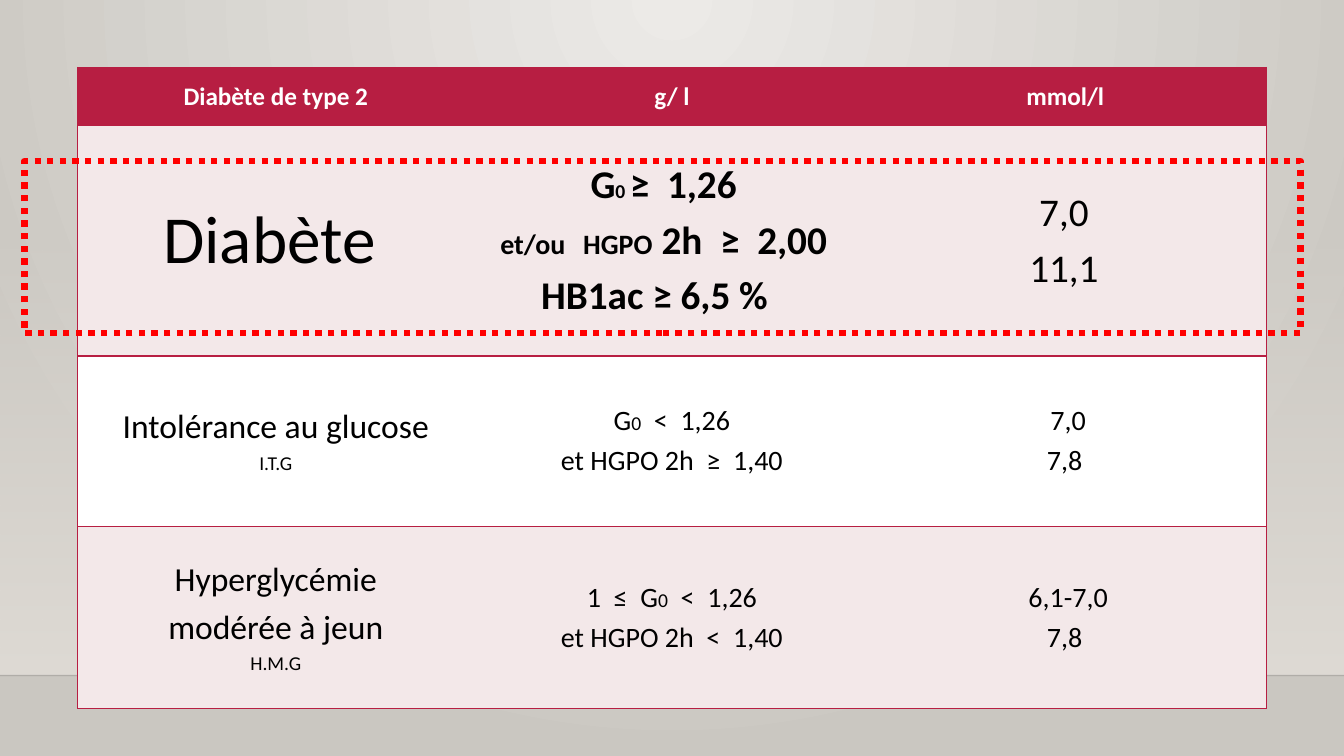
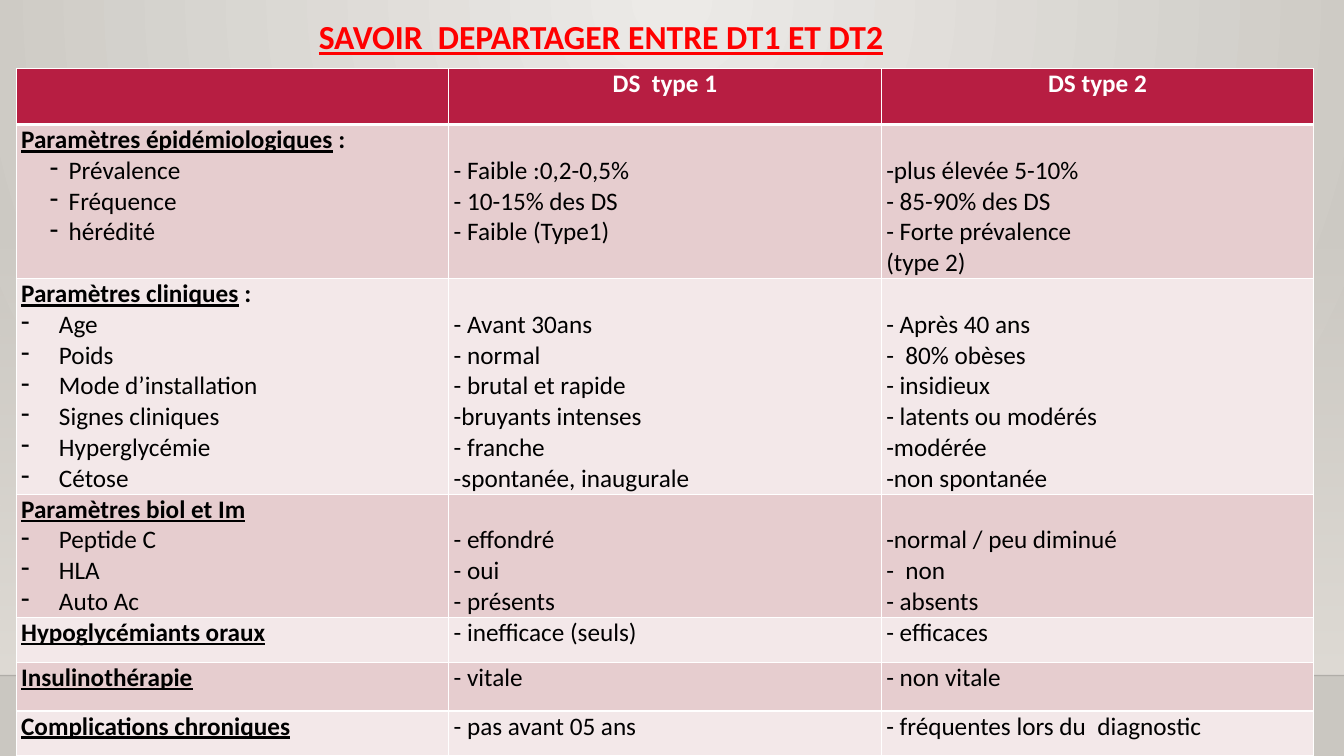
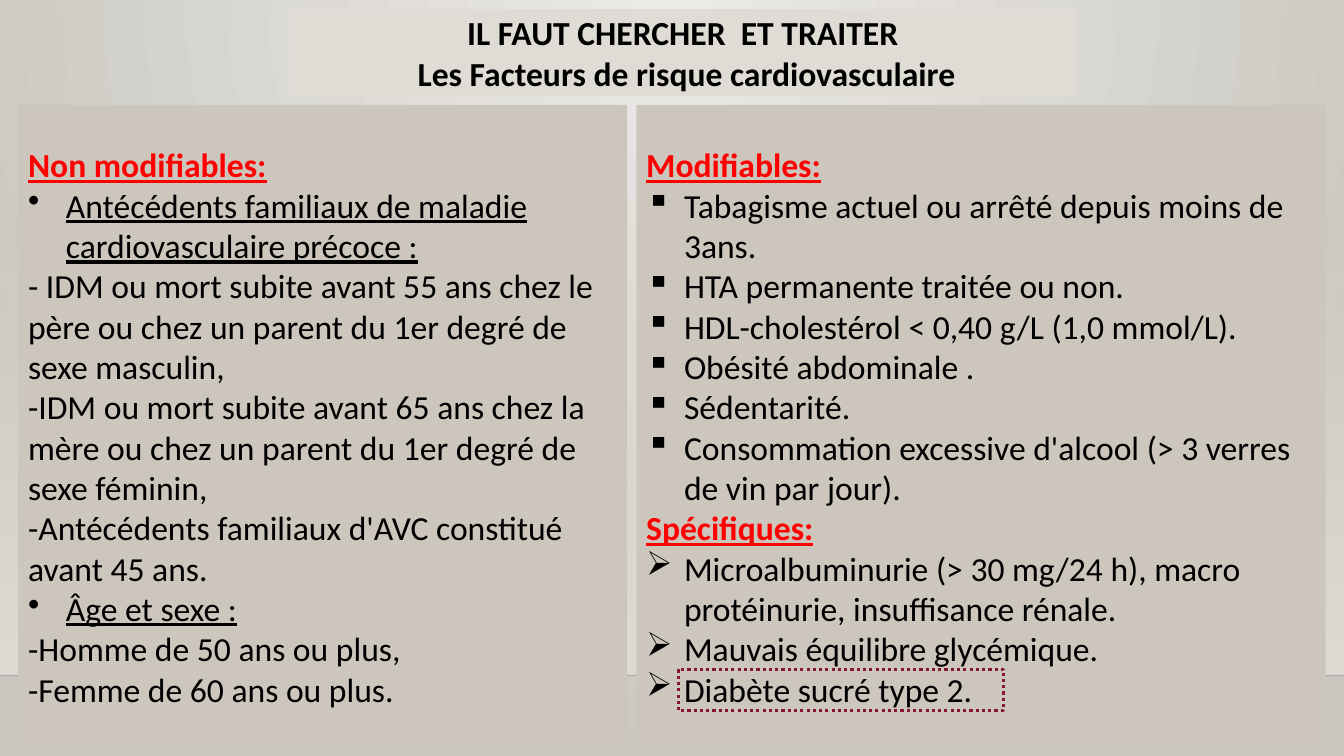
from lxml.etree import SubElement
from pptx import Presentation
from pptx.dml.color import RGBColor
from pptx.enum.dml import MSO_LINE
from pptx.enum.shapes import MSO_CONNECTOR, MSO_SHAPE
from pptx.enum.text import MSO_ANCHOR, MSO_AUTO_SIZE, PP_ALIGN
from pptx.oxml.ns import qn
from pptx.util import Pt

BLACK = RGBColor(0x00, 0x00, 0x00)
WHITE = RGBColor(0xFF, 0xFF, 0xFF)
RED = RGBColor(0xFF, 0x00, 0x00)
CRIMSON = RGBColor(0xB7, 0x1E, 0x42)
MAROON = RGBColor(0x87, 0x16, 0x31)
ROSE = RGBColor(0xE6, 0xCD, 0xCF)
PALE_ROSE = RGBColor(0xF3, 0xE8, 0xE9)
TAUPE = RGBColor(0xCC, 0xC6, 0xBC)
SAND = RGBColor(0xDF, 0xDB, 0xD5)
GLOW = RGBColor(0xEC, 0xEA, 0xE7)
STONE = RGBColor(0xCA, 0xC7, 0xC1)

BODY = {"name": "Calibri", "size": Pt(18), "bold": False, "underline": False, "color": BLACK}
BOLD = {"bold": True}
UNDERLINED = {"underline": True}
KEY = {"bold": True, "underline": True}
RED_KEY = {**KEY, "color": RED}
LARGE = {**BODY, "size": Pt(24)}
HEADER = {**BODY, "bold": True, "color": WHITE}


def write(frame, lines, base, alignment=PP_ALIGN.LEFT, spacing=0):
    for index, (runs, indents) in enumerate(lines):
        paragraph = frame.add_paragraph() if index else frame.paragraphs[0]
        paragraph.alignment = alignment
        styles = [{**base, **changes} for _, changes in runs]
        tallest = max(style["size"].pt for style in styles)
        paragraph.space_before = Pt(round(tallest * spacing, 1) if index else 0)
        properties = paragraph._p.get_or_add_pPr()
        for side in ("marL", "marR", "indent"):
            if side in indents:
                properties.set(side, str(Pt(indents[side])))
        if "bullet" in indents:
            SubElement(properties, qn("a:buChar")).set("char", indents["bullet"])
        for (text, _), style in zip(runs, styles):
            run = paragraph.add_run()
            run.text = text
            run.font.color.rgb = style.pop("color")
            for attribute, value in style.items():
                setattr(run.font, attribute, value)


def paint(cell, fill, margins, borders):
    cell.fill.solid()
    cell.fill.fore_color.rgb = fill
    for side, margin in zip(("left", "top", "right", "bottom"), margins):
        setattr(cell, f"margin_{side}", Pt(margin))
    properties = cell._tc.get_or_add_tcPr()
    for position, (side, (color, width)) in enumerate(zip("LRTB", borders)):
        edge = SubElement(properties, qn(f"a:ln{side}"))
        edge.set("w", str(Pt(width)))
        if color is None:
            SubElement(edge, qn("a:noFill"))
        else:
            SubElement(SubElement(edge, qn("a:solidFill")), qn("a:srgbClr")).set("val", str(color))
        properties.insert(position, edge)


deck = Presentation()
deck.slide_width, deck.slide_height = Pt(960), Pt(540)
title_only, blank = deck.slide_layouts[5], deck.slide_layouts[6]
criteria, comparison, risks = [deck.slides.add_slide(layout) for layout in (blank, title_only, title_only)]

master = deck.slide_master
backdrop = master.background.fill
backdrop.gradient()
for stop, color in zip(backdrop.gradient_stops, (GLOW, STONE)):
    stop.color.rgb = color
gradient = master.element.xpath("p:cSld/p:bg//a:gradFill")[0]
for direction in gradient.xpath("a:lin"):
    gradient.remove(direction)
circle = SubElement(gradient, qn("a:path"))
circle.set("path", "circle")
focus = SubElement(circle, qn("a:fillToRect"))
for side, percent in {"l": 43, "t": 0, "r": 43, "b": 100}.items():
    focus.set(side, str(percent * 1000))

wall = criteria.shapes.add_shape(MSO_SHAPE.RECTANGLE, 0, Pt(159), Pt(960), Pt(323.5))
wall.shadow.inherit = False
wall.line.fill.background()
wall.fill.gradient()
wall.fill.gradient_angle = 270
for stop in wall.fill.gradient_stops:
    stop.color.rgb = SAND
SubElement(wall.element.xpath(".//a:gs/a:srgbClr")[0], qn("a:alpha")).set("val", "0")

horizon = criteria.shapes.add_connector(MSO_CONNECTOR.STRAIGHT, 0, Pt(482.5), Pt(960), Pt(482.5))
horizon.line.color.rgb = BLACK
horizon.line.width = Pt(1)
SubElement(horizon.element.xpath(".//a:ln//a:srgbClr")[0], qn("a:alpha")).set("val", "20000")
SubElement(horizon.element.spPr, qn("a:effectLst"))

for offset, scenery in enumerate((wall, horizon)):
    scenery.element.xpath(".//p:cNvPr")[0].set("id", str(100 + offset))
    master.element.cSld.spTree.insert(2 + offset, scenery.element)

SMALL, MEDIUM, BIG = {"size": Pt(14)}, {"size": Pt(20)}, {"size": Pt(24)}
HUGE = {"size": Pt(48)}
STRONG = {"size": Pt(28), "bold": True}
STRONG_MEDIUM, STRONG_SMALL = {**MEDIUM, **BOLD}, {**SMALL, **BOLD}

criteria_rows = [
    (41.5, CRIMSON, [
        [([("Diabète de type 2", {})], {})],
        [([("g/ l", {})], {})],
        [([("mmol/l", {})], {"marR": 4})],
    ]),
    (164.5, PALE_ROSE, [
        [([("Diabète", HUGE)], {"marR": 9})],
        [
            ([("G", STRONG), ("0 ", STRONG_SMALL), ("≥  1,26", STRONG)], {"marR": 12}),
            ([("et/ou", STRONG_MEDIUM), ("  ", STRONG), ("HGPO", STRONG_MEDIUM), (" 2h  ≥  2,00", STRONG)], {}),
            ([("HB1ac ≥ 6,5 %", STRONG)], {"marR": 25}),
        ],
        [([("7,0", {"size": Pt(28)})], {"marR": 6}), ([("11,1", {"size": Pt(28)})], {})],
    ]),
    (122, WHITE, [
        [([("Intolérance au glucose", BIG)], {}), ([("I.T.G", SMALL)], {})],
        [
            ([("G", MEDIUM), ("0", SMALL), ("  <  1,26", MEDIUM)], {}),
            ([("et HGPO 2h  ≥  1,40", MEDIUM)], {}),
        ],
        [([("7,0", MEDIUM)], {}), ([("7,8", MEDIUM)], {"marR": 5})],
    ]),
    (130, PALE_ROSE, [
        [([("Hyperglycémie", BIG)], {}), ([("modérée à jeun", BIG)], {}), ([("H.M.G", SMALL)], {})],
        [
            ([("1  ≤  G", MEDIUM), ("0", SMALL), ("  <  1,26", MEDIUM)], {}),
            ([("et HGPO 2h  <  1,40", MEDIUM)], {}),
        ],
        [([("6,1-7,0", MEDIUM)], {}), ([("7,8", MEDIUM)], {"marR": 5})],
    ]),
]
thresholds = criteria.shapes.add_table(4, 3, Pt(55.5), Pt(48.25), Pt(849), Pt(458)).table
for column in thresholds.columns:
    column.width = Pt(283)
rule, no_rule = (CRIMSON, 1), (None, 1)
for row, (height, fill, contents) in enumerate(criteria_rows):
    thresholds.rows[row].height = Pt(height)
    for column, lines in enumerate(contents):
        cell = thresholds.cell(row, column)
        cell.vertical_anchor = MSO_ANCHOR.MIDDLE
        sides = (rule if column == 0 else no_rule, rule if column == 2 else no_rule)
        paint(cell, fill, (7.2, 3.6, 7.2, 3.6), (*sides, rule, rule))
        write(cell.text_frame, lines, BODY if row else HEADER, PP_ALIGN.CENTER, 0.2)

DASH = {"bullet": "-", "marL": 27, "indent": -27}
INNER_DASH = {"bullet": "-", "marL": 34, "indent": -13.5}
comparison_rows = [
    (110, "Paramètres épidémiologiques", " :", INNER_DASH,
     ["Prévalence", "Fréquence", "hérédité"],
     ["- Faible :0,2-0,5%", "- 10-15% des DS", "- Faible (Type1)"],
     ["-plus élevée 5-10%", "- 85-90% des DS", "- Forte prévalence", "(type 2)"]),
    (154, "Paramètres cliniques", " :", DASH,
     ["Age", "Poids", "Mode d’installation", "Signes cliniques", "Hyperglycémie", "Cétose"],
     ["- Avant 30ans", "- normal", "- brutal et rapide", "-bruyants intenses", "- franche",
      "-spontanée, inaugurale"],
     ["- Après 40 ans", "-  80% obèses", "- insidieux", "- latents ou modérés", "-modérée",
      "-non spontanée"]),
    (88, "Paramètres biol et Im", "", DASH,
     ["Peptide C", "HLA", "Auto Ac"],
     ["- effondré", "- oui", "- présents"],
     ["-normal / peu diminué", "-  non", "- absents"]),
    (32, "Hypoglycémiants oraux", "", DASH, [], ["- inefficace (seuls)"], ["- efficaces"]),
    (35, "Insulinothérapie", "", DASH, [], ["- vitale"], ["- non vitale"]),
    (32, "Complications chroniques", "", DASH, [], ["- pas avant 05 ans"],
     ["- fréquentes lors du  diagnostic"]),
]
differences = comparison.shapes.add_table(7, 3, Pt(11.5), Pt(49), Pt(927), Pt(491)).table
for column in differences.columns:
    column.width = Pt(309)
hairline, thick = (WHITE, 1), (WHITE, 3)
differences.rows[0].height = Pt(40)
for column, diabetes_type in enumerate(("", "DS  type 1", "DS type 2")):
    cell = differences.cell(0, column)
    paint(cell, CRIMSON, (3.6, 0, 3.6, 0), (hairline, hairline, hairline, thick))
    if diabetes_type:
        write(cell.text_frame, [([(diabetes_type, {})], {})], HEADER, PP_ALIGN.CENTER)
for row, (height, parameter, colon, dash, items, *types) in enumerate(comparison_rows, 1):
    differences.rows[row].height = Pt(height)
    heading = [(parameter, KEY)] + ([(colon, BOLD)] if colon else [])
    contents = [[(heading, {})] + [([(item, {})], dash) for item in items]]
    contents += [[([(finding, {})], {}) for finding in findings] for findings in types]
    for column, lines in enumerate(contents):
        cell = differences.cell(row, column)
        top = 22 if column and items else 0
        top_rule = thick if row == 1 else hairline
        paint(cell, ROSE if row % 2 else PALE_ROSE, (3.6, top, 3.6, 0),
              (hairline, hairline, top_rule, hairline))
        write(cell.text_frame, lines, BODY, PP_ALIGN.JUSTIFY)

DOT, SQUARE, ARROW = [{"bullet": mark, "marL": 27, "indent": -27} for mark in "•▪➢"]
panels = [
    (13, 435, [
        ("Non modifiables:", RED_KEY, {}),
        ("Antécédents familiaux de maladie cardiovasculaire précoce :", UNDERLINED, DOT),
        ("- IDM ou mort subite avant 55 ans chez le père ou chez un parent du 1er degré de sexe masculin,", {}, {}),
        ("-IDM ou mort subite avant 65 ans chez la mère ou chez un parent du 1er degré de sexe féminin,", {}, {}),
        ("-Antécédents familiaux d'AVC constitué avant 45 ans.", {}, {}),
        ("Âge et sexe :", UNDERLINED, DOT),
        ("-Homme de 50 ans ou plus,", {}, {}),
        ("-Femme de 60 ans ou plus.", {}, {}),
    ]),
    (454.5, 492.5, [
        ("Modifiables:", RED_KEY, {}),
        ("Tabagisme actuel ou arrêté depuis moins de 3ans.", {}, SQUARE),
        ("HTA permanente traitée ou non.", {}, SQUARE),
        ("HDL-cholestérol < 0,40 g/L (1,0 mmol/L).", {}, SQUARE),
        ("Obésité abdominale .", {}, SQUARE),
        ("Sédentarité.", {}, SQUARE),
        ("Consommation excessive d'alcool (> 3 verres de vin par jour).", {}, SQUARE),
        ("Spécifiques:", RED_KEY, {}),
        ("Microalbuminurie (> 30 mg/24 h), macro protéinurie, insuffisance rénale.", {}, ARROW),
        ("Mauvais équilibre glycémique.", {}, ARROW),
        ("Diabète sucré type 2.", {}, ARROW),
    ]),
]
for left, width, entries in panels:
    panel = risks.shapes.add_shape(MSO_SHAPE.RECTANGLE, Pt(left), Pt(75), Pt(width), Pt(459.5))
    panel.shadow.inherit = False
    panel.fill.solid()
    panel.fill.fore_color.rgb = TAUPE
    panel.line.fill.background()
    panel.text_frame.word_wrap = True
    panel.text_frame.vertical_anchor = MSO_ANCHOR.MIDDLE
    write(panel.text_frame, [([(text, changes)], indents) for text, changes, indents in entries], LARGE)

titles = [
    (comparison, (220.5, 8, 572.5, 36), ["SAVOIR  DEPARTAGER ENTRE DT1 ET DT2"],
     RED_KEY, PP_ALIGN.LEFT, MSO_ANCHOR.TOP),
    (risks, (206.5, 6.5, 562.5, 62), ["IL FAUT CHERCHER  ET TRAITER", " Les Facteurs de risque cardiovasculaire"],
     BOLD, PP_ALIGN.CENTER, MSO_ANCHOR.MIDDLE),
]
for slide, place, texts, changes, alignment, anchor in titles:
    title = slide.shapes.title
    for attribute, length in zip(("left", "top", "width", "height"), place):
        setattr(title, attribute, Pt(length))
    frame_format = {"word_wrap": True, "auto_size": MSO_AUTO_SIZE.NONE, "vertical_anchor": anchor}
    for attribute, value in frame_format.items():
        setattr(title.text_frame, attribute, value)
    write(title.text_frame, [([(text, changes)], {}) for text in texts], LARGE, alignment)
risks.shapes.title.fill.solid()
risks.shapes.title.fill.fore_color.rgb = SAND

highlights = [
    (criteria, (17.5, 115, 911.5, 123), RED, 4.5),
    (risks, (484.5, 478, 232.5, 29.5), MAROON, 2.25),
]
for slide, place, color, width in highlights:
    highlight = slide.shapes.add_shape(MSO_SHAPE.RECTANGLE, *map(Pt, place))
    highlight.shadow.inherit = False
    highlight.fill.background()
    highlight.line.color.rgb = color
    highlight.line.width = Pt(width)
    highlight.line.dash_style = MSO_LINE.ROUND_DOT

deck.save("out.pptx")
